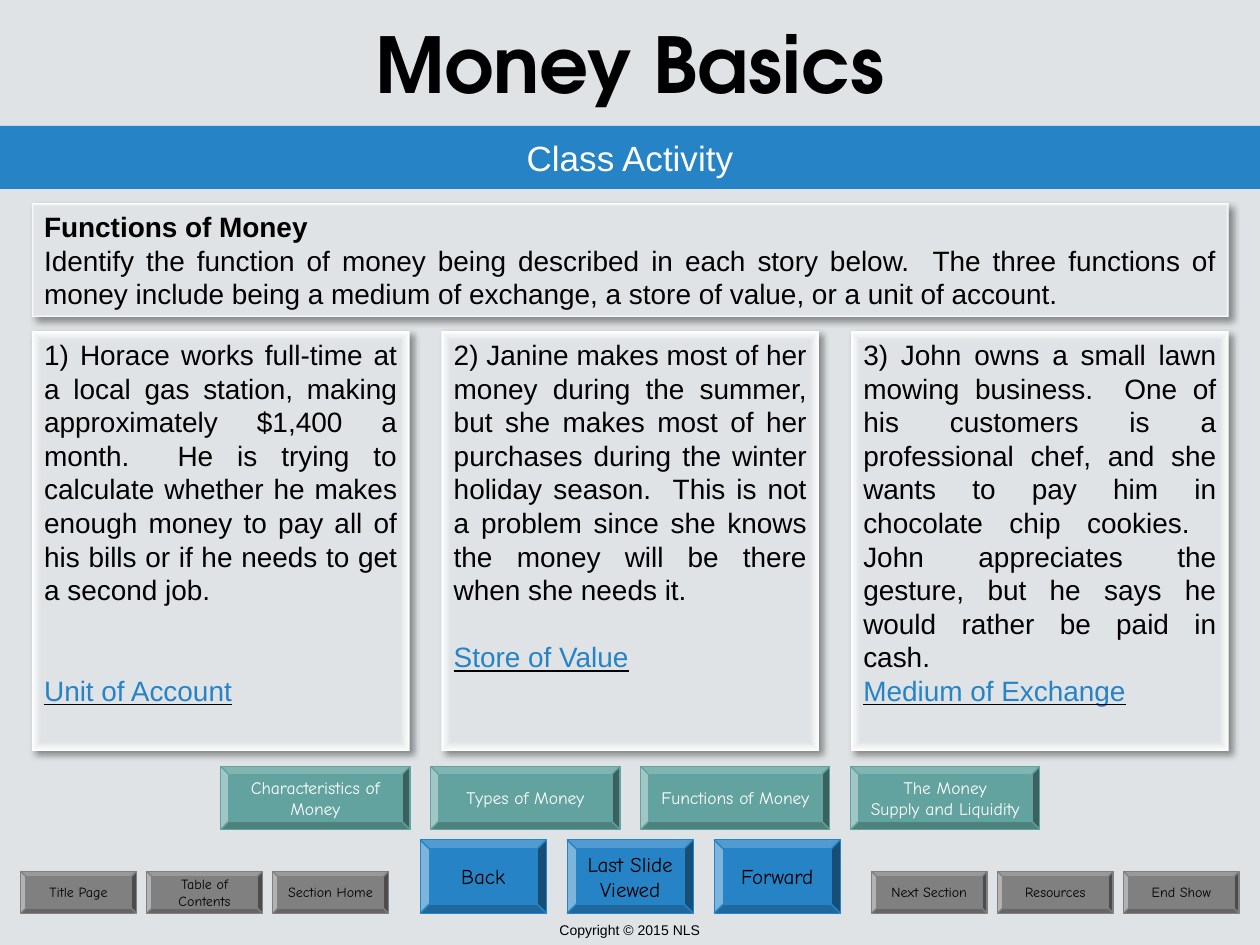
from dataclasses import dataclass

from lxml.etree import SubElement
from pptx import Presentation
from pptx.dml.color import RGBColor
from pptx.enum.shapes import MSO_SHAPE
from pptx.enum.text import MSO_ANCHOR, PP_ALIGN
from pptx.oxml import parse_xml
from pptx.oxml.ns import nsdecls, qn
from pptx.util import Cm, Pt


@dataclass(frozen=True)
class Theme:
    """Colours, fonts and type sizes of the slide."""
    paper: str = "DFE3E5"
    blue: str = "2683C6"
    teal: str = "62A39F"
    grey: str = "808080"
    black: str = "000000"
    white: str = "FFFFFF"
    body: str = "Arial"
    head: str = "TeX Gyre Adventor"
    hand: str = "Comic Neue"
    title: int = 44
    band: int = 20
    text: int = 16
    large: int = 12
    medium: int = 10
    small: int = 8
    line: float = 19.2


THEME = Theme()

STORIES = [
    ("1) Horace works full-time at a local gas station, making approximately "
     "$1,400 a month.  He is trying to calculate whether he makes enough money "
     "to pay all of his bills or if he needs to get a second job.",
     "Unit of Account", 2),
    ("2) Janine makes most of her money during the summer, but she makes most "
     "of her purchases during the winter holiday season.  This is not a problem "
     "since she knows the money will be there when she needs it.",
     "Store of Value", 1),
    ("3) John owns a small lawn mowing business.  One of his customers is a "
     "professional chef, and she wants to pay him in chocolate chip cookies.  "
     "John appreciates the gesture, but he says he would rather be paid in cash.",
     "Medium of Exchange", 0),
]
TASK = ("Identify the function of money being described in each story below.  "
        "The three functions of money include being a medium of exchange, "
        "a store of value, or a unit of account.")


def write(frame, text, size=THEME.text, ink=THEME.black, font=THEME.body,
          align=PP_ALIGN.CENTER, bold=False, under=False, gap=0):
    """Append each line of text to the frame as a formatted paragraph."""
    for line in text.split("\n"):
        fresh = not frame.text
        para = frame.paragraphs[0] if fresh else frame.add_paragraph()
        para.alignment = align
        if gap:
            para.space_before = Pt(gap)
        run = para.add_run()
        run.text = line
        face = run.font
        face.size, face.name, face.bold = Pt(size), font, bold
        face.color.rgb = RGBColor.from_string(ink)
        if under:
            face.underline = True
            fill = parse_xml(
                f'<a:uFill {nsdecls("a")}><a:solidFill>'
                f'<a:srgbClr val="{THEME.black}"/></a:solidFill></a:uFill>')
            run._r.rPr.find(qn("a:solidFill")).addnext(fill)


def split(box, count, gap):
    """Yield equal boxes that fill a row."""
    left, top, width, height = box
    part = (width - gap * (count - 1)) / count
    for i in range(count):
        yield left + i * (part + gap), top, part, height


def block(slide, box, kind=MSO_SHAPE.RECTANGLE, fill=None, edge=None,
          anchor=MSO_ANCHOR.MIDDLE, wrap=True):
    """Add a flat shape with an optional fill and edge."""
    shape = slide.shapes.add_shape(kind, *map(Cm, box))
    shape.shadow.inherit = False
    if fill:
        shape.fill.solid()
        shape.fill.fore_color.rgb = RGBColor.from_string(fill)
    else:
        shape.fill.background()
    if edge:
        shape.line.color.rgb = RGBColor.from_string(edge)
        shape.line.width = Pt(0.75)
    else:
        shape.line.fill.background()
    frame = shape.text_frame
    frame.word_wrap, frame.vertical_anchor = wrap, anchor
    return shape


def label(slide, box, text, anchor=MSO_ANCHOR.TOP, **style):
    """Add a plain text box."""
    frame = slide.shapes.add_textbox(*map(Cm, box)).text_frame
    frame.word_wrap, frame.vertical_anchor = True, anchor
    write(frame, text, **style)


def panel(slide, box):
    """Add a glowing panel with a soft shadow and return its text frame."""
    shape = block(slide, box, anchor=MSO_ANCHOR.TOP)
    props = shape._element.spPr
    glow = parse_xml(
        f'<a:gradFill {nsdecls("a")} rotWithShape="1"><a:gsLst>'
        f'<a:gs pos="0"><a:srgbClr val="{THEME.paper}"/></a:gs>'
        f'<a:gs pos="95000"><a:srgbClr val="{THEME.paper}"/></a:gs>'
        f'<a:gs pos="100000"><a:srgbClr val="{THEME.white}"/></a:gs></a:gsLst>'
        '<a:path path="shape"><a:fillToRect l="50000" t="50000" r="50000" '
        'b="50000"/></a:path></a:gradFill>')
    props.replace(props.find(qn("a:noFill")), glow)
    shade = SubElement(props.find(qn("a:effectLst")), qn("a:outerShdw"),
                       blurRad=str(Pt(4)), dist=str(Pt(3)), dir="2700000",
                       algn="tl", rotWithShape="0")
    ink = SubElement(shade, qn("a:srgbClr"), val=THEME.black)
    SubElement(ink, qn("a:alpha"), val="40000")
    return shape.text_frame


def header(slide, box):
    """Place the title above the coloured band."""
    left, top, width, height = box
    label(slide, (left, top, width, height * 2 / 3), "Money Basics",
          anchor=MSO_ANCHOR.MIDDLE, size=THEME.title, font=THEME.head, bold=True)
    band = block(slide, (left, top + height * 2 / 3, width, height / 3),
                 fill=THEME.blue)
    write(band.text_frame, "Class Activity", size=THEME.band, ink=THEME.white)


def task(slide, box):
    """Place the instructions."""
    frame = panel(slide, box)
    write(frame, "Functions of Money", align=PP_ALIGN.JUSTIFY, bold=True)
    write(frame, TASK, align=PP_ALIGN.JUSTIFY)


def cards(slide, box):
    """Place the stories side by side with their answers."""
    for spot, (story, answer, skip) in zip(split(box, len(STORIES), 0.64), STORIES):
        frame = panel(slide, spot)
        write(frame, story, align=PP_ALIGN.JUSTIFY)
        write(frame, answer, align=PP_ALIGN.JUSTIFY, ink=THEME.blue,
              under=True, gap=skip * THEME.line)


def keys(slide, box, names, fill, gap=0.42, **style):
    """Place a row of bevelled buttons."""
    for spot, name in zip(split(box, len(names), gap), names):
        shape = block(slide, spot, MSO_SHAPE.BEVEL, fill, fill, wrap=False)
        write(shape.text_frame, name, font=THEME.hand, **style)


def main():
    """Build and save the slide."""
    deck = Presentation()
    deck.slide_width, deck.slide_height = Cm(25.4), Cm(19.05)
    slide = deck.slides.add_slide(deck.slide_layouts[6])
    slide.background.fill.solid()
    slide.background.fill.fore_color.rgb = RGBColor.from_string(THEME.paper)
    header(slide, (0, 0, 25.4, 3.81))
    task(slide, (0.64, 4.1, 24.13, 2.3))
    cards(slide, (0.64, 6.68, 24.13, 8.46))
    keys(slide, (4.45, 15.45, 16.51, 1.27),
         ["Characteristics of\nMoney", "Types of Money", "Functions of Money",
          "The Money\nSupply and Liquidity"],
         THEME.teal, size=THEME.medium, ink=THEME.white)
    keys(slide, (8.47, 16.93, 8.47, 1.48),
         ["Back", "Last Slide\nViewed", "Forward"], THEME.blue, size=THEME.large)
    for left, names in (
            (0.42, ["Title Page", "Table of\nContents", "Section Home"]),
            (17.57, ["Next Section", "Resources", "End Show"])):
        keys(slide, (left, 17.57, 7.41, 0.84), names, THEME.grey, gap=0.21,
             size=THEME.small)
    label(slide, (0, 18.46, 25.4, 0.59), "Copyright © 2015 NLS", size=THEME.small)
    deck.save("out.pptx")


if __name__ == "__main__":
    main()
